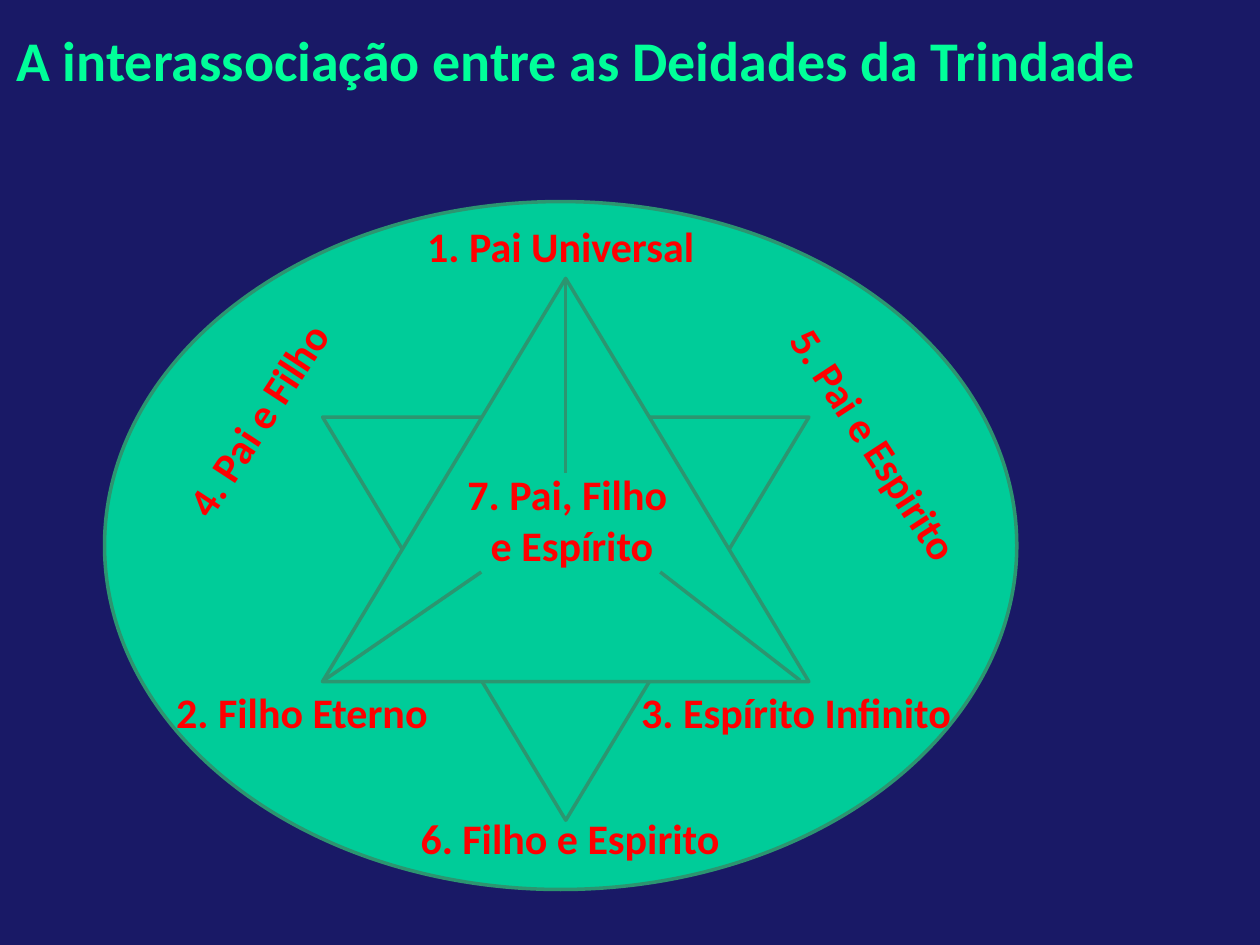
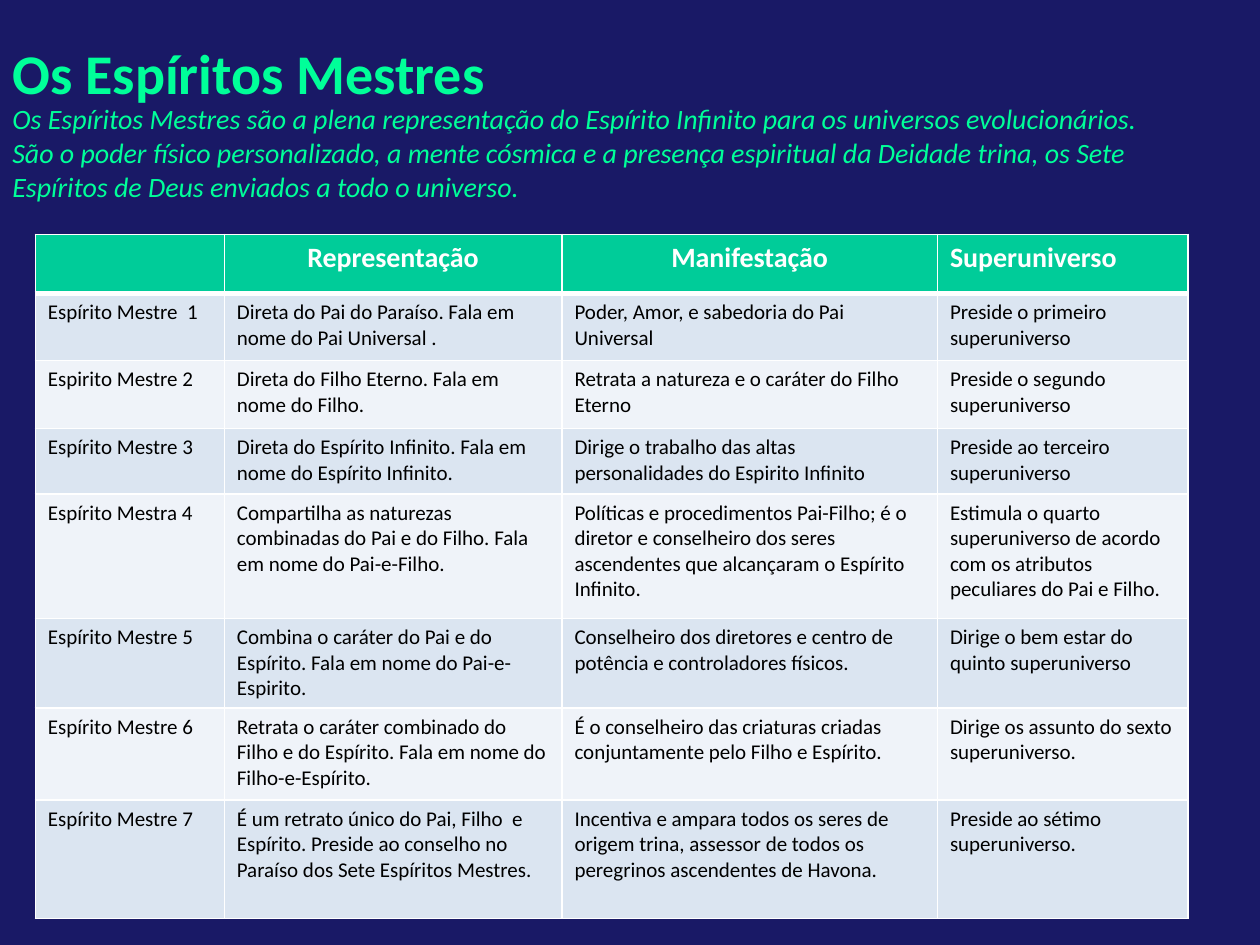
"""Build two slides on the Trinity Deities and the Master Spirits."""
from lxml.etree import SubElement
from pptx import Presentation
from pptx.dml.color import RGBColor
from pptx.enum.shapes import MSO_CONNECTOR, MSO_SHAPE
from pptx.enum.text import MSO_ANCHOR, MSO_AUTO_SIZE, PP_ALIGN
from pptx.oxml.ns import qn
from pptx.util import Inches, Pt

FONT = "Calibri"
NAVY, MINT, GREEN, OUTLINE = "191966", "00FF99", "00CC99", "2C9570"
RED, WHITE, BLACK = "FF0000", "FFFFFF", "000000"
BANDS = ("DBE5F1", "EFF3F9")

HEADERS = ("", "Representação", "Manifestação", "Superuniverso")
MASTER_SPIRITS = [
    ("Espírito Mestre  1",
     "Direta do Pai do Paraíso. Fala em nome do Pai Universal .",
     "Poder, Amor, e sabedoria do Pai Universal",
     "Preside o primeiro superuniverso"),
    ("Espirito Mestre 2",
     "Direta do Filho Eterno. Fala em nome do Filho.",
     "Retrata a natureza e o caráter do Filho Eterno",
     "Preside o segundo superuniverso"),
    ("Espírito Mestre 3",
     "Direta do Espírito Infinito. Fala em nome do Espírito Infinito.",
     "Dirige o trabalho das altas personalidades do Espirito Infinito",
     "Preside ao terceiro superuniverso"),
    ("Espírito Mestra 4",
     "Compartilha as naturezas combinadas do Pai e do Filho. Fala em nome do Pai-e-Filho.",
     "Políticas e procedimentos Pai-Filho; é o diretor e conselheiro dos seres "
     "ascendentes que alcançaram o Espírito Infinito.",
     "Estimula o quarto superuniverso de acordo com os atributos peculiares do Pai e Filho."),
    ("Espírito Mestre 5",
     "Combina o caráter do Pai e do Espírito. Fala em nome do Pai-e-Espirito.",
     "Conselheiro dos diretores e centro de potência e controladores físicos.",
     "Dirige o bem estar do quinto superuniverso"),
    ("Espírito Mestre 6",
     "Retrata o caráter combinado do Filho e do Espírito. Fala em nome do Filho-e-Espírito.",
     "É o conselheiro das criaturas criadas conjuntamente pelo Filho e Espírito.",
     "Dirige os assunto do sexto superuniverso."),
    ("Espírito Mestre 7",
     "É um retrato único do Pai, Filho  e Espírito. Preside ao conselho no Paraíso "
     "dos Sete Espíritos Mestres.",
     "Incentiva e ampara todos os seres de origem trina, assessor de todos os "
     "peregrinos ascendentes de Havona.",
     "Preside ao sétimo superuniverso."),
]


def rgb(value):
    return RGBColor.from_string(value)


class Deck:
    def __init__(self):
        self.presentation = Presentation()
        self.presentation.slide_width = Inches(10)
        self.presentation.slide_height = Inches(7.5)
        backdrop = self.presentation.slide_master.background.fill
        backdrop.solid()
        backdrop.fore_color.rgb = rgb(NAVY)
        self.slide = None

    def style(self, frame, size, color, bold=False, italic=False, align=PP_ALIGN.LEFT):
        for paragraph in frame.paragraphs:
            paragraph.alignment = align
            for run in paragraph.runs:
                font = run.font
                font.name, font.size = FONT, Pt(size)
                font.bold, font.italic = bold, italic
                font.color.rgb = rgb(color)

    def start(self, heading, box):
        self.slide = self.presentation.slides.add_slide(self.presentation.slide_layouts[5])
        title = self.slide.shapes.title
        title.left, title.top, title.width, title.height = map(Inches, box)
        frame = title.text_frame
        frame.text = heading
        frame.auto_size = MSO_AUTO_SIZE.NONE
        frame.vertical_anchor = MSO_ANCHOR.MIDDLE
        self.style(frame, 32, MINT, bold=True)

    def text(self, words, box, size, color, rotation=0, **look):
        holder = self.slide.shapes.add_textbox(*map(Inches, box))
        holder.rotation = rotation
        holder.text_frame.word_wrap = True
        holder.text_frame.paragraphs[0].text = words
        self.style(holder.text_frame, size, color, **look)

    def label(self, words, box, rotation=0, align=PP_ALIGN.LEFT):
        self.text(words, box, 24, RED, rotation, bold=True, align=align)

    def figure(self, kind, box, rotation=0):
        shape = self.slide.shapes.add_shape(kind, *map(Inches, box))
        shape.rotation = rotation
        shape.shadow.inherit = False
        shape.fill.solid()
        shape.fill.fore_color.rgb = rgb(GREEN)
        shape.line.color.rgb = rgb(OUTLINE)
        shape.line.width = Pt(2)
        return shape

    def spoke(self, start, end):
        line = self.slide.shapes.add_connector(
            MSO_CONNECTOR.STRAIGHT, *map(Inches, start + end))
        line.line.color.rgb = rgb(OUTLINE)
        line.line.width = Pt(2)
        SubElement(line._element.spPr, qn("a:effectLst"))
        return line

    def borders(self, cell, top, bottom):
        properties = cell._tc.get_or_add_tcPr()
        for side, width in zip("LRTB", (1, 1, top, bottom)):
            edge = SubElement(properties, qn(f"a:ln{side}"), w=str(Pt(width)))
            paint = SubElement(edge, qn("a:solidFill"))
            SubElement(paint, qn("a:srgbClr"), val=WHITE)

    def table(self, rows, left, top, widths, heights):
        grid = self.slide.shapes.add_table(
            len(rows), len(widths), Inches(left), Inches(top),
            Inches(sum(widths)), Inches(sum(heights))).table
        for column, width in zip(grid.columns, widths):
            column.width = Inches(width)
        for r, (row, height) in enumerate(zip(rows, heights)):
            grid.rows[r].height = Inches(height)
            for c, words in enumerate(row):
                cell = grid.cell(r, c)
                cell.text = words
                self.borders(cell, 3 if r == 1 else 1, 3 if r == 0 else 1)
                cell.fill.solid()
                cell.fill.fore_color.rgb = rgb(BANDS[(r - 1) % 2] if r else GREEN)
                if r:
                    self.style(cell.text_frame, 12, BLACK)
                else:
                    align = PP_ALIGN.CENTER if c < 3 else PP_ALIGN.LEFT
                    self.style(cell.text_frame, 16, WHITE, bold=True, align=align)


def trinity_slide(deck):
    deck.start("A interassociação entre as Deidades da Trindade", (0.03, -0.03, 9.86, 0.99))
    deck.figure(MSO_SHAPE.OVAL, (0.83, 1.6, 7.24, 5.46))
    deck.figure(MSO_SHAPE.ISOSCELES_TRIANGLE, (2.56, 3.31, 3.86, 3.2), 180)
    deck.label("1. Pai Universal", (3.11, 1.7, 2.68, 0.5), align=PP_ALIGN.CENTER)
    deck.label("2. Filho Eterno", (1.3, 5.4, 2.29, 0.5))
    deck.label("3. Espírito Infinito", (4.99, 5.4, 2.69, 0.5))
    deck.label("4. Pai e Filho", (1.05, 3.04, 2.03, 0.5), 303.2)
    deck.label("5. Pai e Espirito", (5.77, 3.31, 2.41, 0.5), 56.8)
    deck.label("6. Filho e Espirito", (3.19, 6.4, 2.67, 0.5), align=PP_ALIGN.CENTER)
    deities = deck.figure(MSO_SHAPE.ISOSCELES_TRIANGLE, (2.56, 2.21, 3.86, 3.2))
    deck.label("7. Pai, Filho \ve Espírito", (3.6, 3.67, 1.88, 0.91), align=PP_ALIGN.CENTER)
    deck.spoke((4.49, 2.21), (4.49, 3.75)).begin_connect(deities, 0)
    deck.spoke((3.82, 4.54), (2.57, 5.4))
    deck.spoke((5.24, 4.54), (6.35, 5.4))


def master_spirits_slide(deck):
    deck.start("Os Espíritos Mestres", (0, 0.05, 9.57, 1.05))
    deck.table([HEADERS] + MASTER_SPIRITS, 0.28, 1.86, (1.5, 2.68, 2.98, 1.99),
               (0.47, 0.53, 0.54, 0.52, 0.99, 0.71, 0.73, 0.94))
    deck.text("Os Espíritos Mestres são a plena representação do Espírito Infinito para os "
              "universos evolucionários. São o poder físico personalizado, a mente cósmica e a "
              "presença espiritual da Deidade trina, os Sete Espíritos de Deus enviados a todo "
              "o universo.", (0, 0.76, 9.21, 0.91), 16, MINT, italic=True)


def main():
    deck = Deck()
    trinity_slide(deck)
    master_spirits_slide(deck)
    deck.presentation.save("out.pptx")


if __name__ == "__main__":
    main()
